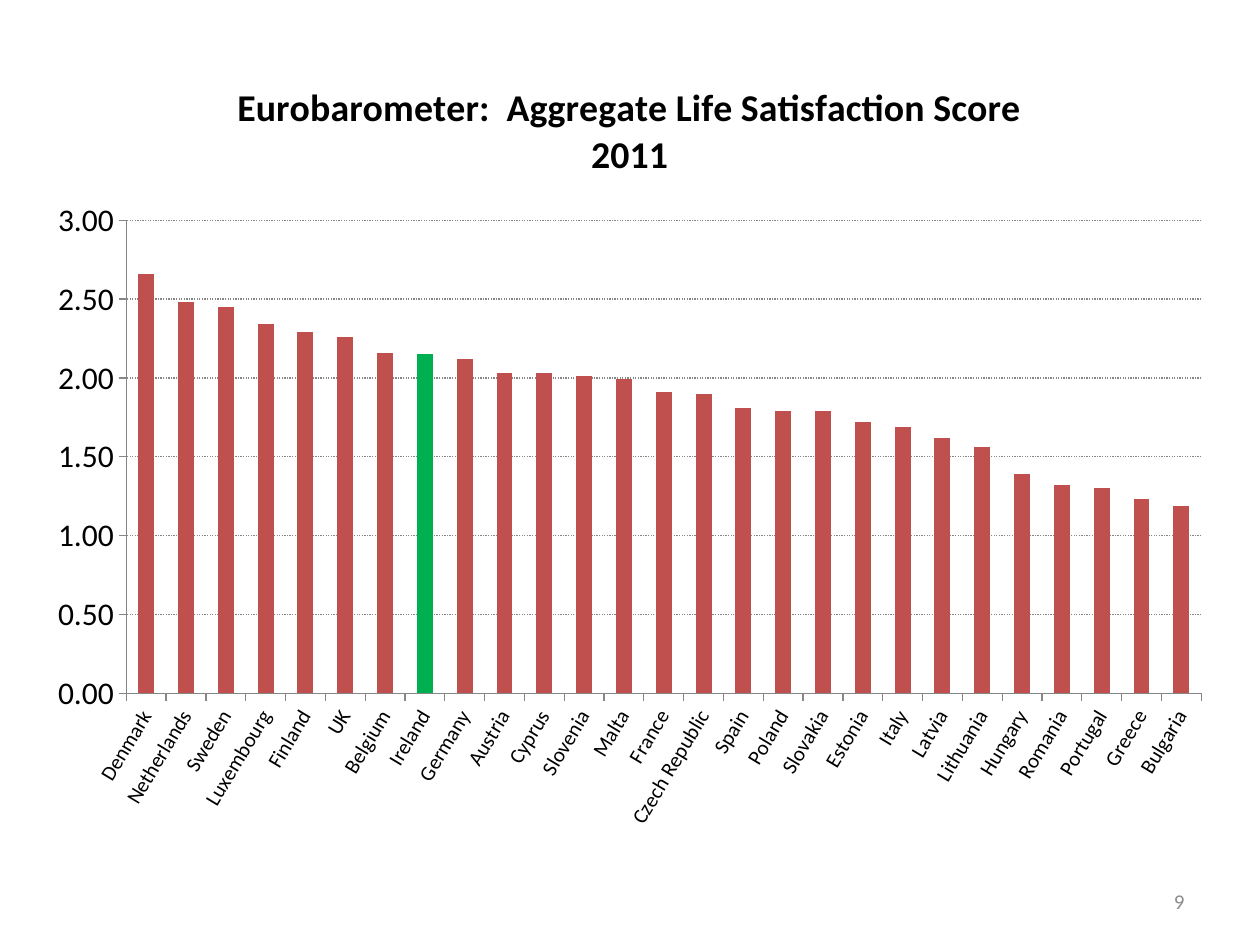
from dataclasses import dataclass

from lxml.etree import SubElement
from pptx import Presentation
from pptx.chart.data import CategoryChartData
from pptx.dml.color import RGBColor
from pptx.enum.chart import XL_CHART_TYPE as ChartType, XL_TICK_MARK as TickMark
from pptx.enum.dml import MSO_LINE_DASH_STYLE as Dash
from pptx.enum.text import MSO_ANCHOR as Anchor, PP_ALIGN as Align
from pptx.oxml.ns import qn
from pptx.util import Cm, Pt

BLACK = RGBColor(0x00, 0x00, 0x00)
GREY = RGBColor(0x8C, 0x8C, 0x8C)
AXIS_GREY = RGBColor(0x86, 0x86, 0x86)
RED = RGBColor(0xC0, 0x50, 0x4D)
GREEN = RGBColor(0x00, 0xB0, 0x50)
FONT = "Calibri"
HIGHLIGHTED = "Ireland"
LABEL_ANGLE = -59
ANGLE_UNITS = 60000


@dataclass(frozen=True)
class Score:
    country: str
    value: float


SCORES = [
    Score("Denmark", 2.66), Score("Netherlands", 2.48), Score("Sweden", 2.45),
    Score("Luxembourg", 2.34), Score("Finland", 2.29), Score("UK", 2.26),
    Score("Belgium", 2.16), Score("Ireland", 2.15), Score("Germany", 2.12),
    Score("Austria", 2.03), Score("Cyprus", 2.03), Score("Slovenia", 2.01),
    Score("Malta", 1.99), Score("France", 1.91), Score("Czech Republic", 1.9),
    Score("Spain", 1.81), Score("Poland", 1.79), Score("Slovakia", 1.79),
    Score("Estonia", 1.72), Score("Italy", 1.69), Score("Latvia", 1.62),
    Score("Lithuania", 1.56), Score("Hungary", 1.39), Score("Romania", 1.32),
    Score("Portugal", 1.3), Score("Greece", 1.23), Score("Bulgaria", 1.19),
]


def write(frame, text: str, *, size: float, color: RGBColor,
          bold: bool = False, align: Align = Align.CENTER) -> None:
    for index, line in enumerate(text.split("\n")):
        paragraph = frame.add_paragraph() if index else frame.paragraphs[0]
        paragraph.alignment = align
        run = paragraph.add_run()
        run.text = line
        run.font.name = FONT
        run.font.size = Pt(size)
        run.font.bold = bold
        run.font.color.rgb = color


def place(part, index: int, **fractions: float) -> None:
    for existing in part.findall(qn("c:layout")):
        part.remove(existing)
    layout = SubElement(part, qn("c:layout"))
    part.insert(index, layout)
    manual = SubElement(layout, qn("c:manualLayout"))
    settings = {"xMode": "edge", "yMode": "edge", **fractions}
    if "w" in fractions:
        settings = {"layoutTarget": "inner", **settings}
    for tag, value in settings.items():
        SubElement(manual, qn(f"c:{tag}")).set("val", str(value))


def style_axis(axis, size: float) -> None:
    axis.major_tick_mark = TickMark.OUTSIDE
    axis.minor_tick_mark = TickMark.NONE
    axis.format.line.color.rgb = AXIS_GREY
    axis.format.line.width = Pt(0.75)
    axis.tick_labels.font.size = Pt(size)
    axis.tick_labels.font.name = FONT
    axis.tick_labels.font.color.rgb = BLACK


def add_score_chart(slide, scores: list[Score]) -> None:
    data = CategoryChartData(number_format="0.00")
    data.categories = [score.country for score in scores]
    data.add_series("Series 1", [score.value for score in scores])
    chart = slide.shapes.add_chart(
        ChartType.COLUMN_CLUSTERED, Cm(0.71), Cm(1.12), Cm(24), Cm(15.9), data
    ).chart
    chart.has_legend = False
    chart.font.name = FONT
    chart.font.size = Pt(18)
    chart.font.color.rgb = BLACK

    title = chart.chart_title
    write(title.text_frame, "Eurobarometer:  Aggregate Life Satisfaction Score\n2011",
          size=21.6, color=BLACK, bold=True)
    title.include_in_layout = False
    place(title._element, 1, x=0.1666, y=0.0286)
    place(chart._chartSpace.chart.plotArea, 0, x=0.0765, y=0.2088, w=0.903, h=0.6)

    countries, values = chart.category_axis, chart.value_axis
    style_axis(countries, 12)
    countries._element.txPr.bodyPr.set("rot", str(LABEL_ANGLE * ANGLE_UNITS))
    style_axis(values, 18)
    values.minimum_scale, values.maximum_scale, values.major_unit = 0, 3, 0.5
    values.tick_labels.number_format = "0.00"
    values.tick_labels.number_format_is_linked = False
    gridlines = values.major_gridlines.format.line
    gridlines.color.rgb = AXIS_GREY
    gridlines.width = Pt(0.75)
    gridlines.dash_style = Dash.ROUND_DOT

    plot = chart.plots[0]
    plot.gap_width = 150
    plot.vary_by_categories = False
    columns = plot.series[0]
    columns.invert_if_negative = False
    columns.format.fill.solid()
    columns.format.fill.fore_color.rgb = RED
    position = [score.country for score in scores].index(HIGHLIGHTED)
    highlight = columns.points[position].format.fill
    highlight.solid()
    highlight.fore_color.rgb = GREEN


def add_page_number(slide, number: str) -> None:
    frame = slide.shapes.add_textbox(Cm(18.21), Cm(17.65), Cm(5.92), Cm(1.02)).text_frame
    frame.word_wrap = True
    frame.vertical_anchor = Anchor.MIDDLE
    write(frame, number, size=12, color=GREY, align=Align.RIGHT)


def main() -> None:
    deck = Presentation()
    deck.slide_width, deck.slide_height = Cm(25.4), Cm(19.05)
    slide = deck.slides.add_slide(deck.slide_layouts[6])
    add_score_chart(slide, SCORES)
    add_page_number(slide, "9")
    deck.save("out.pptx")


if __name__ == "__main__":
    main()
